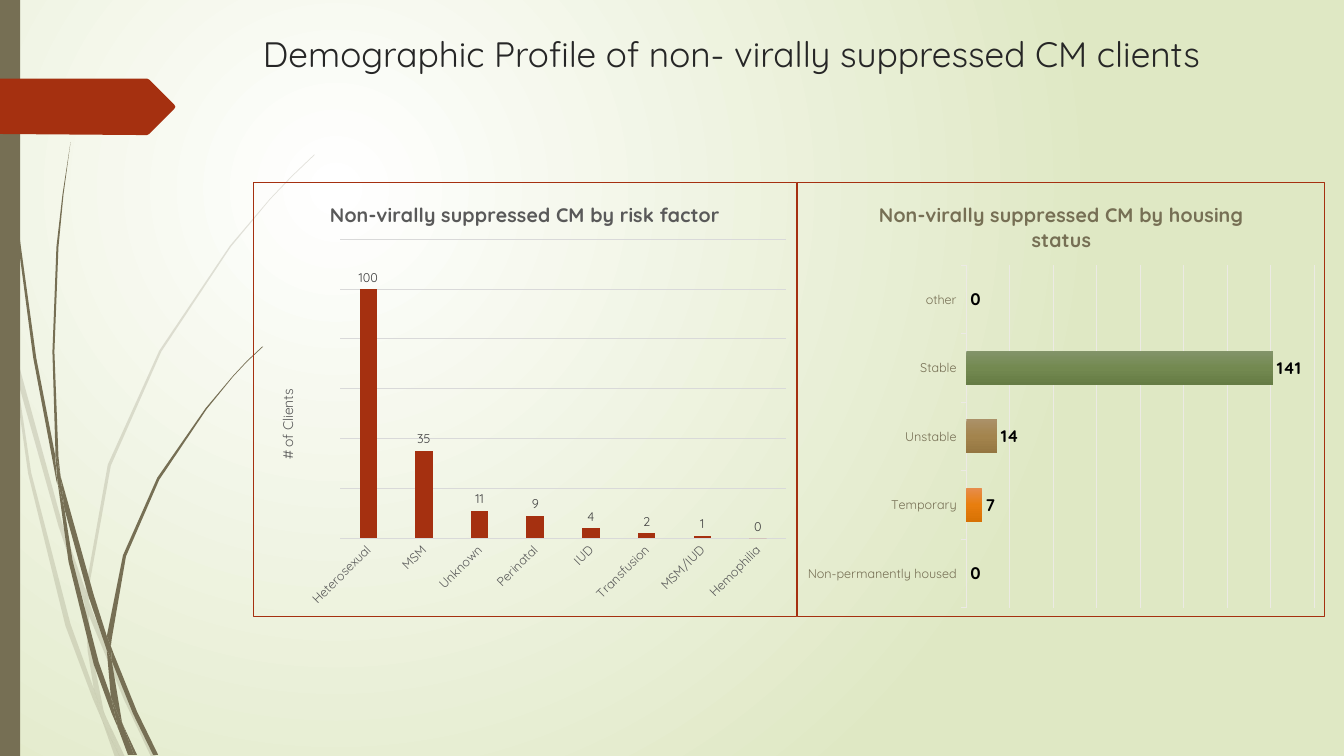
import copy
import pptx
import pptx.chart.data
import pptx.dml.color
import pptx.enum.chart
import pptx.enum.shapes
import pptx.oxml
import pptx.oxml.ns
import pptx.util

Pt = pptx.util.Pt
qn = pptx.oxml.ns.qn
NS = pptx.oxml.ns.nsdecls("a", "c")
FONT = "Quicksand"
COLORS = {"olive": "766F54", "red": "A53010", "white": "FFFFFF", "lime": "DFE8C4", "ink": "262626",
          "black": "000000", "dark": "404040", "gray": "595959", "silver": "D9D9D9", "mist": "ECEAE4"}
RGB = {name: pptx.dml.color.RGBColor.from_string(c) for name, c in COLORS.items()}


def style(font, size, color, bold=False):
    font.name, font.size, font.bold = FONT, Pt(size), bold
    font.color.rgb = RGB[color]


def place(parent, index, **fractions):
    for old in parent.findall(qn("c:layout")):
        parent.remove(old)
    target = '<c:layoutTarget val="inner"/>' if "w" in fractions else ""
    sides = "".join(f'<c:{k} val="{v}"/>' for k, v in fractions.items())
    parent.insert(index, pptx.oxml.parse_xml(
        f'<c:layout {NS}><c:manualLayout>{target}<c:xMode val="edge"/><c:yMode val="edge"/>'
        f'{sides}</c:manualLayout></c:layout>'))


prs = pptx.Presentation()
prs.slide_width, prs.slide_height = Pt(960), Pt(540)
s = prs.slides.add_slide(prs.slide_layouts[6])

fill = s.background.fill
fill.gradient()
for stop, color in zip(fill.gradient_stops, ("white", "lime")):
    stop.color.rgb = RGB[color]
grad = s._element.find(".//" + qn("a:gradFill"))
grad.remove(grad.find(qn("a:lin")))
grad.append(pptx.oxml.parse_xml(
    f'<a:path {NS} path="circle"><a:fillToRect l="50000" t="50000" r="100000" b="100000"/></a:path>'))

pale_grass = [
    [(11, 350), (9, 322), (0, 282), (0, 299), (10, 344)],
    [(58, 522), (84, 599), (85, 586), (62, 520), (14, 345), (17, 376)],
    [(92, 607), (88, 596), (88, 610), (123, 694), (150, 751), (155, 751), (127, 692)],
    [(119, 751), (124, 751), (105, 711)],
    [(93, 683), (70, 619), (31, 469), (17, 376), (11, 350), (28, 470), (65, 621), (92, 693),
     (101, 714), (99, 707)],
    [(84, 599), (87, 646), (93, 683), (96, 692), (105, 711), (103, 706), (91, 646), (88, 610),
     (88, 608)],
    [(88, 584), (110, 462), (160, 349), (229, 245), (268, 198), (290, 175), (312, 154), (312, 153),
     (289, 175), (268, 197), (228, 244), (158, 348), (107, 461), (85, 584), (85, 586), (88, 596)],
    [(101, 714), (114, 751), (119, 751)],
    [(88, 608), (88, 610), (88, 596), (85, 586), (84, 599)],
    [(96, 692), (93, 683), (99, 707), (101, 714), (119, 751), (105, 711)],
]
dark_grass = [
    [(7, 110), (17, 233), (33, 355), (56, 477), (57, 481), (55, 457), (55, 453), (36, 355),
     (19, 232), (8, 109), (5, 48), (4, 0), (3, 0), (4, 48)],
    [(88, 592), (106, 645), (106, 633), (106, 631), (93, 590), (60, 472), (64, 505)],
    [(113, 649), (110, 641), (111, 656), (132, 708), (152, 749), (157, 749), (136, 706)],
    [(110, 691), (98, 657), (72, 556), (64, 505), (57, 477), (68, 557), (93, 659), (111, 708),
     (117, 722), (116, 717)],
    [(60, 472), (58, 453), (54, 349), (58, 245), (63, 193), (70, 141), (62, 193), (56, 245),
     (52, 349), (55, 449)],
    [(133, 749), (136, 749), (122, 719)],
    [(57, 477), (64, 505), (60, 472), (55, 449), (55, 453)],
    [(111, 633), (125, 552), (158, 476), (205, 406), (231, 374), (245, 359), (261, 344), (260, 344),
     (245, 358), (231, 373), (204, 405), (156, 474), (122, 551), (106, 631), (110, 641)],
    [(117, 722), (127, 749), (131, 749)],
    [(106, 645), (110, 691), (116, 706), (122, 719), (121, 716), (111, 656), (109, 651)],
    [(106, 645), (109, 651), (111, 656), (110, 641), (106, 631), (106, 633)],
    [(116, 706), (110, 691), (116, 717), (117, 722), (130, 749), (133, 749), (122, 719)],
]
side_bar = [(0, 0), (20, 0), (20, 750), (0, 750)]
arrow_tab = [(173, 108), (148, 133), (146, 134), (136, 134), (0, 133), (0, 78), (136, 78),
             (146, 78), (148, 79), (173, 104), (174, 106)]

outlines = [(o, "olive", 20) for o in pale_grass] + [(o, "olive", 100) for o in dark_grass]
for outline, color, opacity in outlines + [(side_bar, "olive", 100), (arrow_tab, "red", 100)]:
    if outline is side_bar:
        sp = s.shapes.add_shape(pptx.enum.shapes.MSO_SHAPE.RECTANGLE, 0, 0, Pt(14.4), Pt(540))
    else:
        builder = s.shapes.build_freeform(*outline[0], scale=Pt(0.72))
        builder.add_line_segments(outline[1:], close=True)
        sp = builder.convert_to_shape()
    sp.shadow.inherit = False
    sp.line.fill.background()
    sp.fill.solid()
    sp.fill.fore_color.rgb = RGB[color]
    if opacity < 100:
        sp._element.spPr.find(".//" + qn("a:srgbClr")).append(
            pptx.oxml.parse_xml(f'<a:alpha {NS} val="{opacity * 1000}"/>'))

XL = pptx.enum.chart
housing = {
    "type": XL.XL_CHART_TYPE.BAR_CLUSTERED, "left": 569.5, "width": 377.3,
    "title": "Non-virally suppressed CM by housing status", "title_color": "olive",
    "data": {"Non-permanently housed": 0, "Temporary": 7, "Unstable": 14, "Stable": 141, "other": 0},
    "plot": {"x": 0.32, "y": 0.19, "w": 0.66, "h": 0.79}, "max": 160, "gap": 100, "overlap": 0,
    "tick": XL.XL_TICK_MARK.OUTSIDE, "axis_color": "olive", "grid": "mist",
    "label": (12, "black", True),
}
risk = {
    "type": XL.XL_CHART_TYPE.COLUMN_CLUSTERED, "left": 180.7, "width": 388.8,
    "title": "Non-virally suppressed CM by risk factor", "title_color": "gray",
    "data": {"Heterosexual": 100, "MSM": 35, "Unknown": 11, "Perinatal": 9, "IUD": 4,
             "Transfusion": 2, "MSM/IUD": 1, "Hemophilia": 0},
    "plot": {"x": 0.16, "y": 0.13, "w": 0.82, "h": 0.69}, "max": 120, "gap": 219, "overlap": -27,
    "tick": XL.XL_TICK_MARK.NONE, "axis_color": "gray", "grid": "silver",
    "label": (9, "dark", False),
}
charts = []
for spec_row in (housing, risk):
    data = pptx.chart.data.CategoryChartData()
    data.categories = list(spec_row["data"])
    data.add_series("Series 1", list(spec_row["data"].values()))
    chart = s.shapes.add_chart(spec_row["type"], Pt(spec_row["left"]), Pt(130.3),
                               Pt(spec_row["width"]), Pt(310.3), data).chart
    charts.append(chart)
    style(chart.font, 10, "black")
    chart.has_legend = False
    chart._chartSpace.find(qn("c:chart")).addnext(pptx.oxml.parse_xml(
        f'<c:spPr {NS}><a:noFill/><a:ln w="9525"><a:solidFill><a:srgbClr val="{COLORS["red"]}"/>'
        '</a:solidFill></a:ln></c:spPr>'))
    p = chart.chart_title.text_frame.paragraphs[0]
    p.text = spec_row["title"]
    style(p.runs[0].font, 14, spec_row["title_color"], True)
    place(chart._chartSpace.find(".//" + qn("c:plotArea")), 0, **spec_row["plot"])

    cat, val = chart.category_axis, chart.value_axis
    style(cat.tick_labels.font, 9, spec_row["axis_color"])
    cat.major_tick_mark = spec_row["tick"]
    val.minimum_scale, val.maximum_scale, val.major_unit = 0, spec_row["max"], 20
    val.has_major_gridlines = True
    val.visible = False
    for line in (cat.format.line, val.major_gridlines.format.line):
        line.color.rgb = RGB[spec_row["grid"]]
        line.width = Pt(0.75)

    plot = chart.plots[0]
    plot.vary_by_categories = False
    plot.gap_width, plot.overlap = spec_row["gap"], spec_row["overlap"]
    bars = plot.series[0].format.fill
    bars.solid()
    bars.fore_color.rgb = RGB["red"]
    plot.has_data_labels = True
    labels = plot.data_labels
    labels.show_value = True
    labels.position = XL.XL_LABEL_POSITION.OUTSIDE_END
    style(labels.font, *spec_row["label"])

housing_chart, risk_chart = charts
bar_shades = [("B1554C", "AC2C09", "A02301"), ("E78D4D", "E87E0E", "D77104"),
              ("AB9168", "A3844D", "947641"), ("83946A", "738950", "667C45"),
              ("9FB565", "94AF47", "869F3B")]
for i, shades in enumerate(bar_shades):
    fill = housing_chart.plots[0].series[0].points[i].format.fill
    fill.gradient()
    fill.gradient_angle = 270
    first = fill.gradient_stops[0]._gs
    first.addnext(copy.deepcopy(first))
    for stop, position, shade in zip(fill.gradient_stops, (0, 0.5, 1), shades):
        stop.position = position
        stop.color.rgb = pptx.dml.color.RGBColor.from_string(shade)

risk_chart.category_axis._element.find(".//" + qn("a:bodyPr")).set("rot", "-2700000")
axis_title = risk_chart.value_axis.axis_title
p = axis_title.text_frame.paragraphs[0]
p.text = "# of Clients"
style(p.runs[0].font, 10, "gray")
body = axis_title._element.find(".//" + qn("a:bodyPr"))
body.set("rot", "-5400000")
body.set("vert", "horz")
place(axis_title._element, 1, x=0.04, y=0.47)

sp = s.shapes.add_textbox(Pt(180.7), Pt(19.4), Pt(715), Pt(60.5))
s.shapes._spTree.insert(s.shapes._spTree.index(sp._element) - 1, sp._element)
tf = sp.text_frame
tf.word_wrap = True
tf.text = "Demographic Profile of non- virally suppressed CM clients"
style(tf.paragraphs[0].runs[0].font, 25.2, "ink")

prs.save("out.pptx")
